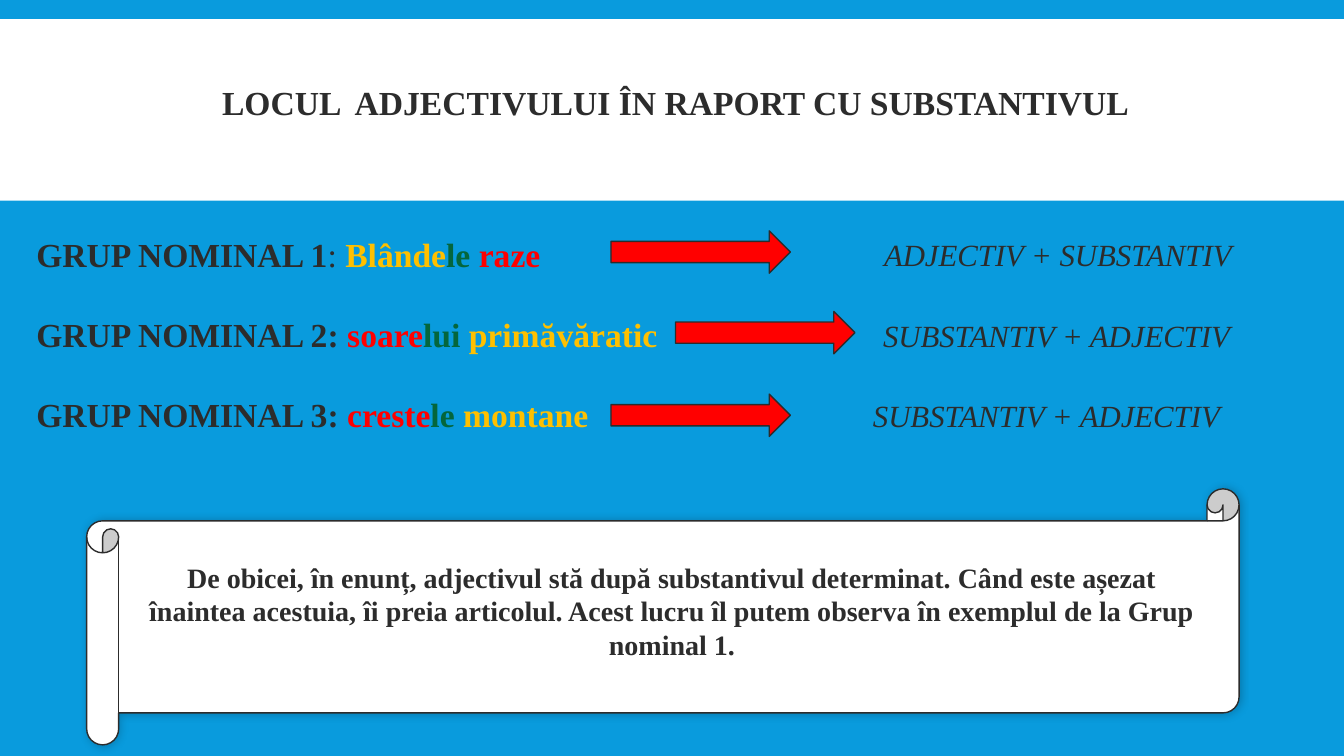
from dataclasses import dataclass

from lxml import etree
from pptx import Presentation
from pptx.dml.color import RGBColor
from pptx.enum.shapes import MSO_SHAPE
from pptx.enum.text import MSO_ANCHOR, MSO_AUTO_SIZE, PP_ALIGN
from pptx.oxml.ns import qn
from pptx.util import Inches, Pt

RECTANGLE = MSO_SHAPE.RECTANGLE
SCROLL = MSO_SHAPE.HORIZONTAL_SCROLL
RIGHT_ARROW = MSO_SHAPE.RIGHT_ARROW
CENTER = PP_ALIGN.CENTER
MIDDLE, TOP = MSO_ANCHOR.MIDDLE, MSO_ANCHOR.TOP
NO_AUTOFIT = MSO_AUTO_SIZE.NONE


@dataclass(frozen=True)
class Theme:
    font: str = "Times New Roman"
    heading: Pt = Pt(24)
    pattern: Pt = Pt(22)
    rule: Pt = Pt(20)
    background: RGBColor = RGBColor(0x09, 0x9B, 0xDD)
    paper: RGBColor = RGBColor(0xFF, 0xFF, 0xFF)
    ink: RGBColor = RGBColor(0x2C, 0x2C, 0x2C)
    adjective: RGBColor = RGBColor(0xFF, 0xC0, 0x00)
    article: RGBColor = RGBColor(0x04, 0x66, 0x3C)
    noun: RGBColor = RGBColor(0xFF, 0x00, 0x00)


theme = Theme()


def add_filled(kind, left, top, width, height, fill, outlined=True):
    shape = slide.shapes.add_shape(
        kind, Inches(left), Inches(top), Inches(width), Inches(height))
    shape.shadow.inherit = False
    shape.fill.solid()
    shape.fill.fore_color.rgb = fill
    if outlined:
        shape.line.color.rgb = theme.ink
        shape.line.width = Pt(1)
    else:
        shape.line.fill.background()
    return shape


def style_heading(paragraph, size):
    paragraph.alignment = CENTER
    paragraph.font.name = theme.font
    paragraph.font.size = size
    paragraph.font.bold = True
    paragraph.font.color.rgb = theme.ink


deck = Presentation()
deck.slide_width, deck.slide_height = Inches(13.33), Inches(7.5)
slide = deck.slides.add_slide(deck.slide_layouts[1])
slide.background.fill.solid()
slide.background.fill.fore_color.rgb = theme.background

# Title on its white band
band = add_filled(RECTANGLE, 0, 0.19, 13.33, 1.8, theme.paper, outlined=False)
slide.shapes._spTree.insert(2, band._element)

title = slide.shapes.title
title.left, title.top = Inches(0.29), Inches(0.39)
title.width, title.height = Inches(12.82), Inches(1.31)
title.text_frame.text = "LOCUL  ADJECTIVULUI ÎN RAPORT CU SUBSTANTIVUL"
title.text_frame.auto_size = NO_AUTOFIT
title.text_frame.vertical_anchor = MIDDLE
title.text_frame.paragraphs[0].line_spacing = 0.85
style_heading(title.text_frame.paragraphs[0], theme.heading)

# Noun groups: label, bold colon, coloured parts, word order and its left edge, arrow position
groups = [
    ("GRUP NOMINAL 1", False,
     [("Blânde", theme.adjective), ("le ", theme.article), ("raze", theme.noun)],
     "ADJECTIV + SUBSTANTIV", 8.67, (6.06, 2.29)),
    ("GRUP NOMINAL 2", True,
     [("soare", theme.noun), ("lui ", theme.article), ("primăvăratic", theme.adjective)],
     "SUBSTANTIV + ADJECTIV", 8.66, (6.7, 3.09)),
    ("GRUP NOMINAL 3", True,
     [("creste", theme.noun), ("le ", theme.article), ("montane", theme.adjective)],
     "SUBSTANTIV + ADJECTIV", 8.56, (6.06, 3.91)),
]
row_pitch = 0.8

examples = slide.placeholders[1]
examples.left, examples.top = Inches(0.26), Inches(2.27)
examples.width, examples.height = Inches(8.3), Inches(2.42)
examples.text_frame.auto_size = NO_AUTOFIT
examples.text_frame.vertical_anchor = TOP

for row, (label, bold_colon, parts, word_order, order_left, arrow_at) in enumerate(groups):
    line = examples.text_frame.paragraphs[0] if row == 0 else examples.text_frame.add_paragraph()
    line.line_spacing = 1.0
    line.space_before = Pt(0)
    line.space_after = Pt(28.5)
    properties = line._p.get_or_add_pPr()
    properties.set("marL", "0")
    properties.set("indent", "0")
    etree.SubElement(properties, qn("a:buNone"))
    line.font.name = theme.font
    line.font.size = theme.heading

    pieces = [(label, theme.ink, True), (": ", theme.ink, bold_colon)]
    pieces += [(text, color, True) for text, color in parts]
    for text, color, bold in pieces:
        piece = line.add_run()
        piece.text = text
        piece.font.bold = bold
        piece.font.color.rgb = color

    add_filled(RIGHT_ARROW, *arrow_at, 1.78, 0.42, theme.noun)

    formula = slide.shapes.add_textbox(
        Inches(order_left), Inches(2.29 + row * row_pitch), Inches(4), Inches(0.44))
    formula.text_frame.word_wrap = True
    formula.text_frame.text = word_order
    formula_font = formula.text_frame.paragraphs[0].font
    formula_font.name = theme.font
    formula_font.size = theme.pattern
    formula_font.italic = True
    formula_font.color.rgb = theme.ink

# Scroll with the rule
scroll = add_filled(SCROLL, 0.86, 4.85, 11.43, 2.54, theme.paper)
effects = scroll._element.spPr.find(qn("a:effectLst"))
glow = etree.SubElement(effects, qn("a:outerShdw"), blurRad=str(Pt(6)), dist="0",
                        dir=str(315 * 60000), algn="ctr", rotWithShape="0")
shade = etree.SubElement(glow, qn("a:srgbClr"), val="000000")
etree.SubElement(shade, qn("a:alpha"), val="20000")

rule = slide.shapes.add_textbox(Inches(1.25), Inches(5.51), Inches(10.83), Inches(0.77))
rule.text_frame.word_wrap = True
rule.text_frame.text = (
    "De obicei, în enunț, adjectivul stă după substantivul determinat. "
    "Când este așezat înaintea acestuia, îi preia articolul. "
    "Acest lucru îl putem observa în exemplul de la Grup nominal 1.")
style_heading(rule.text_frame.paragraphs[0], theme.rule)

deck.save("out.pptx")
